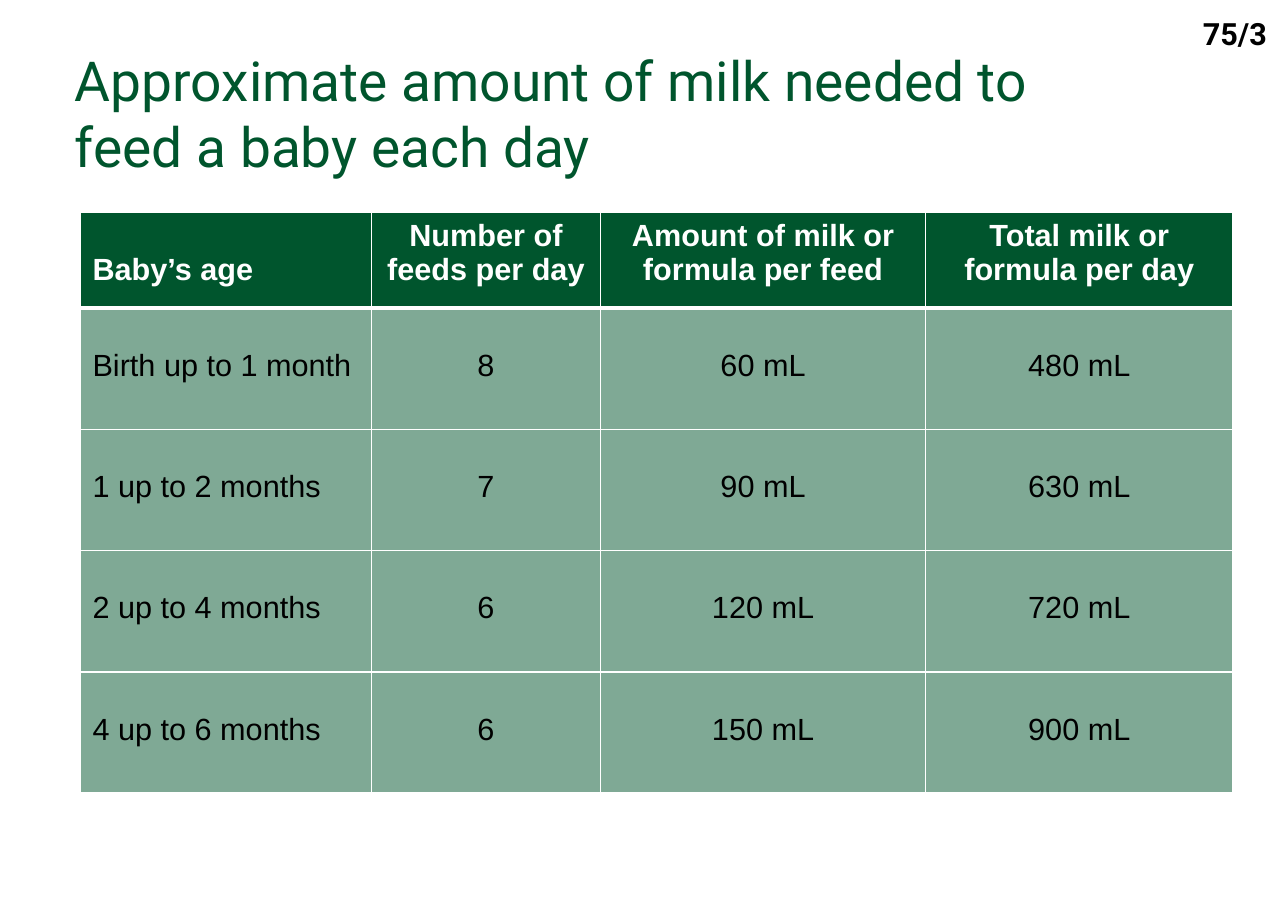
"""Build the slide on how much milk a baby needs each day."""
from dataclasses import dataclass

from lxml.etree import SubElement
from pptx import Presentation
from pptx.dml.color import RGBColor
from pptx.enum.text import MSO_ANCHOR, MSO_AUTO_SIZE, PP_ALIGN
from pptx.oxml.ns import qn
from pptx.util import Pt


@dataclass(frozen=True)
class Theme:
    green: str = "00552D"
    white: str = "FFFFFF"
    black: str = "000000"
    heading_font: str = "Roboto"
    table_font: str = "Arial"
    title_size: int = 36
    text_size: int = 20


theme = Theme()


def add_span(para, text, font, size, color, bold=False):
    span = para.add_run()
    span.text = text
    span.font.name = font
    span.font.size = Pt(size)
    span.font.bold = bold
    span.font.color.rgb = RGBColor.from_string(color)


def add_border(cell, side, width):
    properties = cell._tc.get_or_add_tcPr()
    line = SubElement(properties, qn(f"a:{side}"), w=str(Pt(width)))
    fill = SubElement(line, qn("a:solidFill"))
    SubElement(fill, qn("a:srgbClr"), val=theme.white)


deck = Presentation()
deck.slide_width = Pt(841.68)
deck.slide_height = Pt(595.44)
page = deck.slides.add_slide(deck.slide_layouts[5])

title = page.shapes.title
title.left, title.top, title.width, title.height = Pt(41.8), Pt(23.8), Pt(702), Pt(99.4)
title.text_frame.word_wrap = True
title.text_frame.auto_size = MSO_AUTO_SIZE.NONE
title.text_frame.vertical_anchor = MSO_ANCHOR.MIDDLE
para = title.text_frame.paragraphs[0]
para.alignment = PP_ALIGN.LEFT
add_span(para, "Approximate amount of milk needed to feed a baby each day",
         theme.heading_font, theme.title_size, theme.green)

feeding_rows = [
    ("Baby’s age", "Number of feeds per day",
     "Amount of milk or formula per feed", "Total milk or formula per day"),
    ("Birth up to 1 month", "8", "60 mL", "480 mL"),
    ("1 up to 2 months", "7", "90 mL", "630 mL"),
    ("2 up to 4 months", "6", "120 mL", "720 mL"),
    ("4 up to 6 months", "6", "150 mL", "900 mL"),
]
column_widths = [190.1, 149.8, 212.4, 200.9]
row_heights = [62.6] + [79.2] * 4
side_margin, edge_margin, blank_line = 7.9, 4, 22.4

frame = page.shapes.add_table(
    len(row_heights), len(column_widths), Pt(52.6), Pt(139),
    Pt(sum(column_widths)), Pt(sum(row_heights)))
table = frame.table
table.horz_banding = False
for column, width in zip(table.columns, column_widths):
    column.width = Pt(width)

for row_index, (row, height, texts) in enumerate(zip(table.rows, row_heights, feeding_rows)):
    row.height = Pt(height)
    is_header = row_index == 0
    for column_index, (cell, text) in enumerate(zip(row.cells, texts)):
        is_age = column_index == 0
        cell.margin_left = cell.margin_right = Pt(side_margin)
        cell.margin_bottom = Pt(edge_margin)
        one_line = is_age or not is_header
        cell.margin_top = Pt(edge_margin + blank_line if one_line else edge_margin)
        cell.vertical_anchor = MSO_ANCHOR.TOP
        for side in ("lnL", "lnR", "lnT", "lnB"):
            heavy = (is_header and side == "lnB") or (row_index == 1 and side == "lnT")
            add_border(cell, side, 3 if heavy else 1)
        cell.fill.solid()
        cell.fill.fore_color.rgb = RGBColor.from_string(theme.green)
        if not is_header:
            tint = cell._tc.tcPr.find(qn("a:solidFill")).find(qn("a:srgbClr"))
            SubElement(tint, qn("a:alpha"), val="50000")
        para = cell.text_frame.paragraphs[0]
        para.alignment = PP_ALIGN.LEFT if is_age else PP_ALIGN.CENTER
        add_span(para, text, theme.table_font, theme.text_size,
                 theme.white if is_header else theme.black, is_header)

page_number = page.shapes.add_textbox(Pt(744.5), Pt(5.8), Pt(91.4), Pt(32.4))
page_number.text_frame.word_wrap = True
page_number.text_frame.margin_left = page_number.text_frame.margin_right = Pt(side_margin)
page_number.text_frame.margin_top = page_number.text_frame.margin_bottom = Pt(edge_margin)
para = page_number.text_frame.paragraphs[0]
para.alignment = PP_ALIGN.RIGHT
add_span(para, "75/3", theme.heading_font, theme.text_size, theme.black, True)

deck.save("out.pptx")
